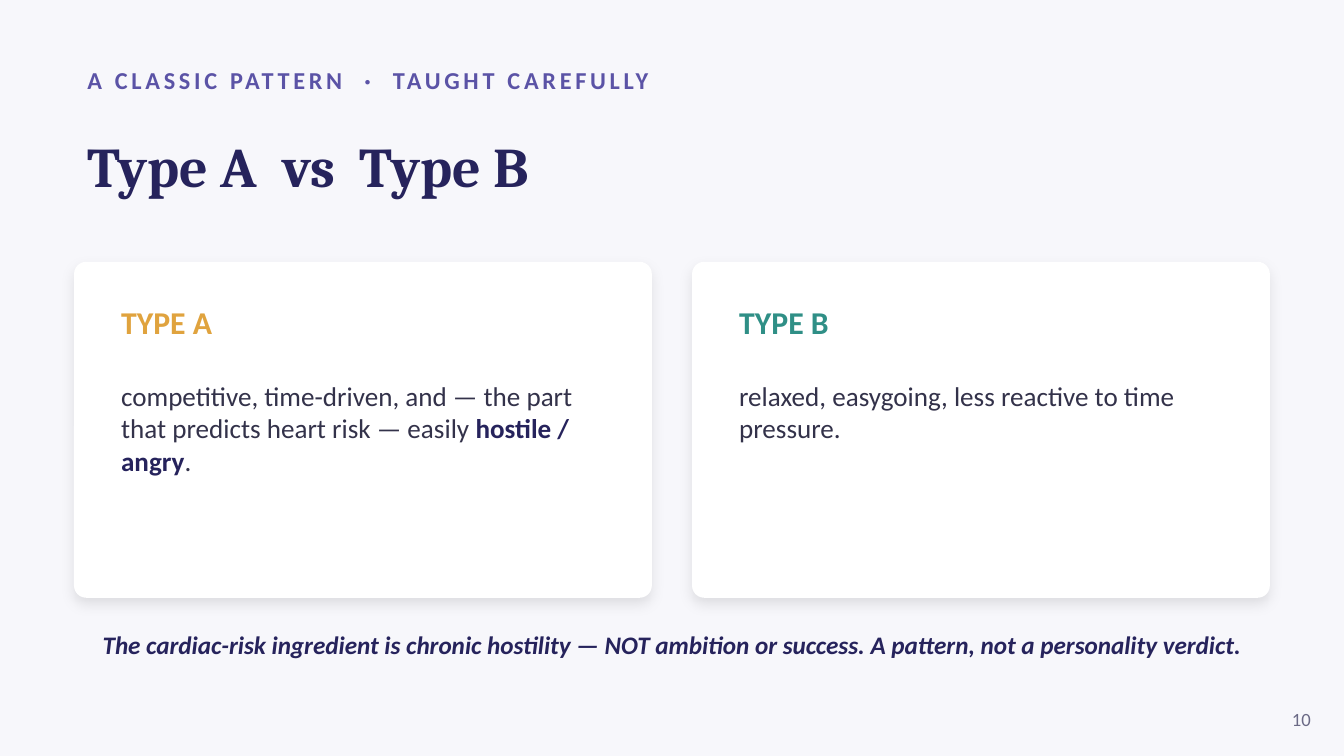
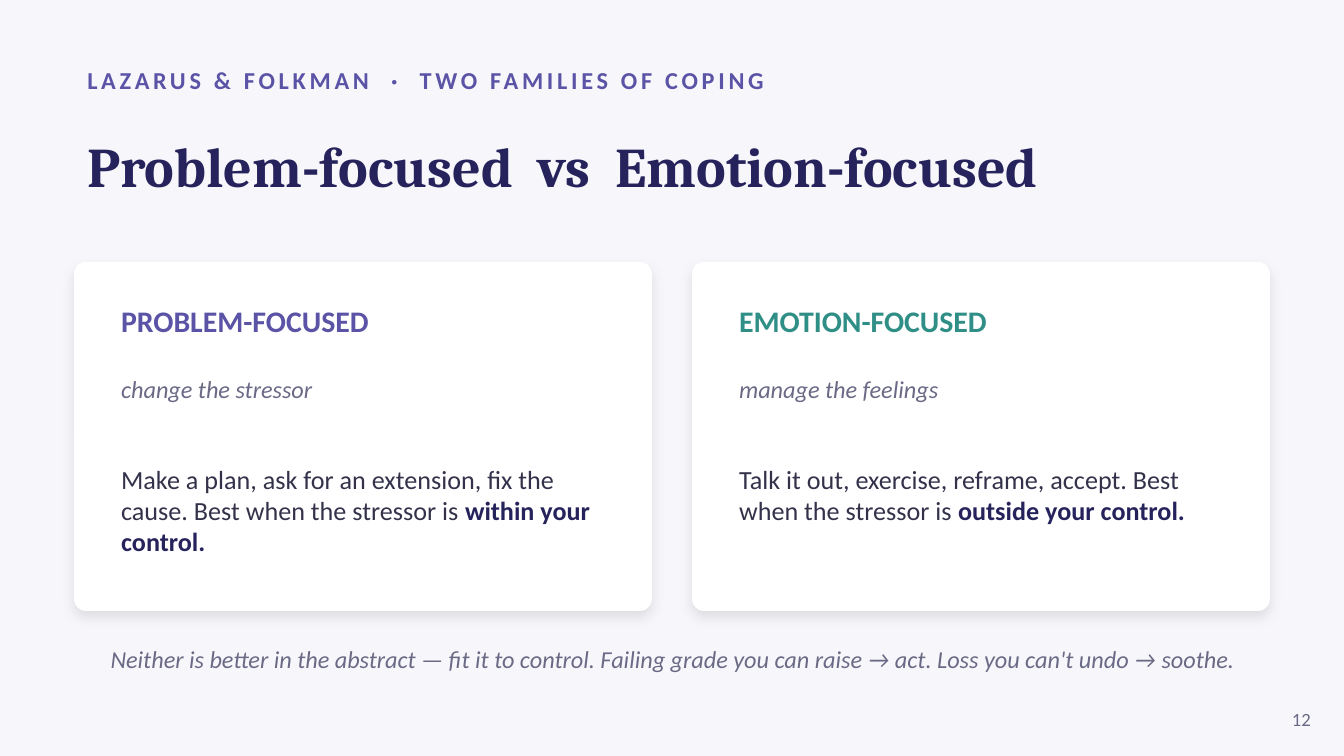
from lxml import etree
from pptx import Presentation
from pptx.dml.color import RGBColor
from pptx.enum.shapes import MSO_SHAPE
from pptx.enum.text import MSO_ANCHOR, PP_ALIGN
from pptx.oxml.ns import qn
from pptx.util import Cm, Pt

COLORS = {
    "background": "F7F7FB",
    "card": "FFFFFF",
    "navy": "26235C",
    "violet": "5B53A6",
    "amber": "E0A33E",
    "teal": "2F8F86",
    "body": "33324A",
    "muted": "6B6A86",
    "shadow": "000000",
}
LINE_HEIGHT = 1.22
MARGIN = 1.4
CONTENT_WIDTH = 22.6
CARD_TOP = 4.95
CARD_WIDTH = 10.92
CARD_PITCH = 11.68
CARD_PADDING = 0.64
CORNER_RADIUS = 0.23


def add_run(paragraph, text, size=13, color="body", font="Calibri",
            bold=False, italic=False, spacing=0):
    run = paragraph.add_run()
    run.text = text
    run.font.size = Pt(size)
    run.font.name = font
    run.font.bold = bold
    run.font.italic = italic
    run.font.color.rgb = RGBColor.from_string(COLORS[color])
    if spacing:
        run.font._element.set("spc", str(spacing * 100))


class Deck:
    def __init__(self):
        self.presentation = Presentation()
        self.presentation.slide_width = Cm(25.4)
        self.presentation.slide_height = Cm(14.29)
        self.slide = None

    def start_slide(self, kicker, title, number):
        self.slide = self.presentation.slides.add_slide(self.presentation.slide_layouts[6])
        fill = self.slide.background.fill
        fill.solid()
        fill.fore_color.rgb = RGBColor.from_string(COLORS["background"])
        self.line(kicker, MARGIN, 1.07, 22.86, 0.89, color="violet", bold=True, spacing=2)
        self.line(title, MARGIN, 1.98, CONTENT_WIDTH, 2.29,
                  size=30, color="navy", font="Cambria", bold=True)
        self.line(str(number), 23.75, 13.21, 1.27, 0.76, PP_ALIGN.RIGHT,
                  size=10, color="muted")

    def frame(self, left, top, width, height, anchor=MSO_ANCHOR.TOP):
        box = self.slide.shapes.add_textbox(Cm(left), Cm(top), Cm(width), Cm(height))
        box.text_frame.word_wrap = True
        box.text_frame.vertical_anchor = anchor
        return box.text_frame

    def line(self, text, left, top, width, height, align=PP_ALIGN.LEFT, **style):
        paragraph = self.frame(left, top, width, height, MSO_ANCHOR.MIDDLE).paragraphs[0]
        paragraph.alignment = align
        add_run(paragraph, text, **style)

    def panel(self, left, height):
        panel = self.slide.shapes.add_shape(
            MSO_SHAPE.ROUNDED_RECTANGLE, Cm(left), Cm(CARD_TOP), Cm(CARD_WIDTH), Cm(height))
        panel.adjustments[0] = CORNER_RADIUS / height
        panel.fill.solid()
        panel.fill.fore_color.rgb = RGBColor.from_string(COLORS["card"])
        panel.line.fill.background()
        panel.shadow.inherit = False
        effects = panel._element.spPr.find(qn("a:effectLst"))
        shadow = etree.SubElement(effects, qn("a:outerShdw"), blurRad=str(Pt(7)),
                                  dist=str(Pt(3)), dir="5400000", algn="bl",
                                  rotWithShape="0")
        tint = etree.SubElement(shadow, qn("a:srgbClr"), val=COLORS["shadow"])
        etree.SubElement(tint, qn("a:alpha"), val="10000")

    def cards(self, contents, height, heading_size, body_size):
        """Place cards side by side; each holds heading, colour, subtitle and body runs."""
        for column, (heading, color, subtitle, body) in enumerate(contents):
            left = MARGIN + column * CARD_PITCH
            self.panel(left, height)
            frame = self.frame(left + CARD_PADDING, CARD_TOP + CARD_PADDING,
                               CARD_WIDTH - 2 * CARD_PADDING, height - 0.95)
            add_run(frame.paragraphs[0], heading, size=heading_size, color=color, bold=True)
            gap = heading_size * LINE_HEIGHT
            if subtitle:
                paragraph = frame.add_paragraph()
                paragraph.space_before = Pt(gap)
                add_run(paragraph, subtitle, color="muted", italic=True)
                gap = 2 * 13 * LINE_HEIGHT
            paragraph = frame.add_paragraph()
            paragraph.space_before = Pt(gap)
            for text, strong in body:
                add_run(paragraph, text, size=body_size,
                        color="navy" if strong else "body", bold=strong)

    def takeaway(self, text, top, **style):
        self.line(text, MARGIN, top, CONTENT_WIDTH, 1.02, PP_ALIGN.CENTER,
                  italic=True, **style)


def main():
    deck = Deck()

    deck.start_slide("A CLASSIC PATTERN  ·  TAUGHT CAREFULLY", "Type A  vs  Type B", 10)
    deck.cards([
        ("TYPE A", "amber", None, [
            ("competitive, time-driven, and — the part that predicts heart risk — easily ", False),
            ("hostile / angry", True),
            (".", False)]),
        ("TYPE B", "teal", None, [
            ("relaxed, easygoing, less reactive to time pressure.", False)]),
    ], height=6.35, heading_size=17, body_size=14.5)
    deck.takeaway("The cardiac-risk ingredient is chronic hostility — NOT ambition or success. "
                  "A pattern, not a personality verdict.",
                  11.68, size=13.5, color="navy", bold=True)

    deck.start_slide("LAZARUS & FOLKMAN  ·  TWO FAMILIES OF COPING",
                     "Problem-focused  vs  Emotion-focused", 12)
    deck.cards([
        ("PROBLEM-FOCUSED", "violet", "change the stressor", [
            ("Make a plan, ask for an extension, fix the cause. Best when the stressor is ", False),
            ("within your control.", True)]),
        ("EMOTION-FOCUSED", "teal", "manage the feelings", [
            ("Talk it out, exercise, reframe, accept. Best when the stressor is ", False),
            ("outside your control.", True)]),
    ], height=6.6, heading_size=16, body_size=14)
    deck.takeaway("Neither is better in the abstract — fit it to control. "
                  "Failing grade you can raise → act. Loss you can't undo → soothe.",
                  11.94, color="muted")

    deck.presentation.save("out.pptx")


if __name__ == "__main__":
    main()
